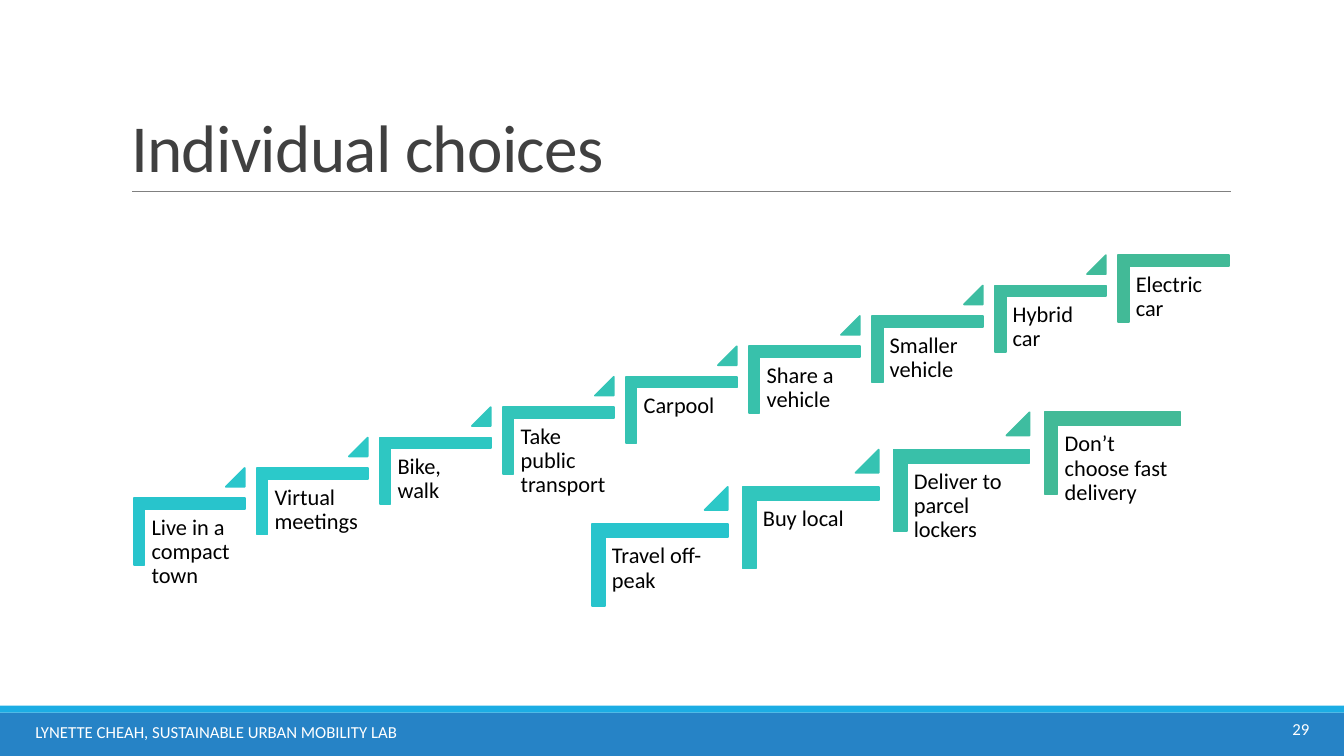
from lxml import etree
from pptx import Presentation
from pptx.dml.color import RGBColor
from pptx.enum.shapes import MSO_CONNECTOR, MSO_SHAPE
from pptx.enum.text import MSO_ANCHOR, PP_ALIGN
from pptx.oxml.ns import qn
from pptx.util import Cm, Pt

RECT, CORNER, TRIANGLE = MSO_SHAPE.RECTANGLE, MSO_SHAPE.CORNER, MSO_SHAPE.ISOSCELES_TRIANGLE
STRAIGHT = MSO_CONNECTOR.STRAIGHT
TOP, MIDDLE, BOTTOM = MSO_ANCHOR.TOP, MSO_ANCHOR.MIDDLE, MSO_ANCHOR.BOTTOM
LEFT, RIGHT = PP_ALIGN.LEFT, PP_ALIGN.RIGHT

BLACK = RGBColor(0x00, 0x00, 0x00)
WHITE = RGBColor(0xFF, 0xFF, 0xFF)
DARK_GREY = RGBColor(0x40, 0x40, 0x40)
GREY = RGBColor(0x80, 0x80, 0x80)
BLUE = RGBColor(0x26, 0x83, 0xC6)
BRIGHT_BLUE = RGBColor(0x1C, 0xAD, 0xE4)
RAMP = [
    (0, RGBColor(0x28, 0xC4, 0xCC)),
    (0.125, RGBColor(0x2B, 0xC9, 0xCA)),
    (0.5, RGBColor(0x35, 0xC3, 0xB2)),
    (1, RGBColor(0x42, 0xBA, 0x97)),
]

# Staircase proportions, in units of one step's width
PITCH, RISE, STEP_H = 1.109, 0.274, 0.6
LABEL_OFFSET, LABEL_W, LABEL_H = 0.1, 0.905, 0.793
ARROW_X, ARROW_SIZE = 0.83, 0.17
BAR = 0.161

TITLE_FONT = {"name": "Calibri", "size": Pt(48)}
LABEL_FONT = {"name": "Calibri", "size": Pt(16)}
FOOTER_FONT = {"name": "Calibri", "size": Pt(12)}

PERSONAL_CHOICES = [
    "Live in a compact town", "Virtual meetings", "Bike, walk",
    "Take public transport", "Carpool", "Share a vehicle",
    "Smaller vehicle", "Hybrid car", "Electric car",
]
OTHER_CHOICES = [
    "Travel off-peak", "Buy local", "Deliver to parcel lockers",
    "Don’t choose fast delivery",
]


def ramp_colour(t):
    """Colour at position t (0 to 1) of the teal-to-green ramp."""
    for (t0, c0), (t1, c1) in zip(RAMP, RAMP[1:]):
        if t <= t1:
            f = (t - t0) / (t1 - t0)
            return RGBColor(*(round(a + (b - a) * f) for a, b in zip(c0, c1)))
    return RAMP[-1][1]


def set_text(tf, text, font, colour, anchor=TOP, align=LEFT, spacing=1.0):
    tf.word_wrap = True
    tf.vertical_anchor = anchor
    p = tf.paragraphs[0]
    p.alignment, p.line_spacing = align, spacing
    r = p.add_run()
    r.text = text
    for name, value in font.items():
        setattr(r.font, name, value)
    r.font.color.rgb = colour
    return r


def add_filled(shapes, kind, x, y, w, h, colour, adjustments=(), line=None):
    sp = shapes.add_shape(kind, Cm(x), Cm(y), Cm(w), Cm(h))
    sp.shadow.inherit = False
    sp.fill.solid()
    sp.fill.fore_color.rgb = colour
    if line:
        sp.line.color.rgb = colour
        sp.line.width = line
    else:
        sp.line.fill.background()
    for i, value in enumerate(adjustments):
        sp.adjustments[i] = value
    return sp


def add_title(s, x, y, w, h, text):
    title = s.shapes.title
    title.left, title.top, title.width, title.height = Cm(x), Cm(y), Cm(w), Cm(h)
    r = set_text(title.text_frame, text, TITLE_FONT, DARK_GREY, BOTTOM, spacing=0.85)
    r._r.get_or_add_rPr().set("spc", "-50")
    rule = s.shapes.add_connector(STRAIGHT, Cm(x + 0.28), Cm(y + h), Cm(x + w + 0.02), Cm(y + h))
    rule.line.color.rgb = GREY
    rule.line.width = Pt(0.5)
    etree.SubElement(rule._element.spPr, qn("a:effectLst"))


def add_footer(s, x, y, w, h, text, number):
    add_filled(s.shapes, RECT, x, y + 0.18, w, h - 0.18, BLUE)
    add_filled(s.shapes, RECT, x, y, w, 0.18, BRIGHT_BLUE)
    for left, top, width, words, align in [
        (x + 0.64, y + 0.15, 13.39, text, LEFT),
        (x + w - 4.25, y + 0.08, 3.63, number, RIGHT),
    ]:
        box = s.shapes.add_textbox(Cm(left), Cm(top), Cm(width), Cm(1.02))
        set_text(box.text_frame, words, FOOTER_FONT, WHITE, MIDDLE, align)


def add_staircase(s, x, y, w, labels):
    """Steps rising to the right; x, y, w are the left, top and full width."""
    shapes = s.shapes.add_group_shape().shapes
    last = len(labels) - 1
    step = w / (1 + last * PITCH)
    for i, label in enumerate(labels):
        left = x + i * PITCH * step
        top = y + (last - i) * RISE * step
        # The corner is turned a quarter, so its own width is the step's height
        shift = step * (1 - STEP_H) / 2
        corner = add_filled(shapes, CORNER, left + shift, top - shift, step * STEP_H, step,
                            ramp_colour(i / last), (BAR, BAR), Pt(1.25))
        corner.rotation = 90
        box = shapes.add_textbox(Cm(left + LABEL_OFFSET * step), Cm(top + LABEL_OFFSET * step),
                                 Cm(LABEL_W * step), Cm(LABEL_H * step))
        tf = box.text_frame
        for side in ("left", "top", "right", "bottom"):
            setattr(tf, f"margin_{side}", Cm(0.17))
        set_text(tf, label, LABEL_FONT, BLACK, spacing=0.9)
        if i < last:
            add_filled(shapes, TRIANGLE, left + ARROW_X * step, top - RISE * step,
                       ARROW_SIZE * step, ARROW_SIZE * step,
                       ramp_colour((i + 0.5) / last), (1,), Pt(1.25))


def main():
    prs = Presentation()
    prs.slide_width, prs.slide_height = Cm(33.87), Cm(19.05)
    s = prs.slides.add_slide(prs.slide_layouts[5])
    add_footer(s, 0, 17.78, 33.87, 1.27, "LYNETTE CHEAH, SUSTAINABLE URBAN MOBILITY LAB", "29")
    add_title(s, 3.05, 0.79, 27.94, 4.04, "Individual choices")
    add_staircase(s, 3.37, 6.43, 27.6, PERSONAL_CHOICES)
    add_staircase(s, 14.91, 10.39, 14.84, OTHER_CHOICES)
    prs.save("out.pptx")


if __name__ == "__main__":
    main()
